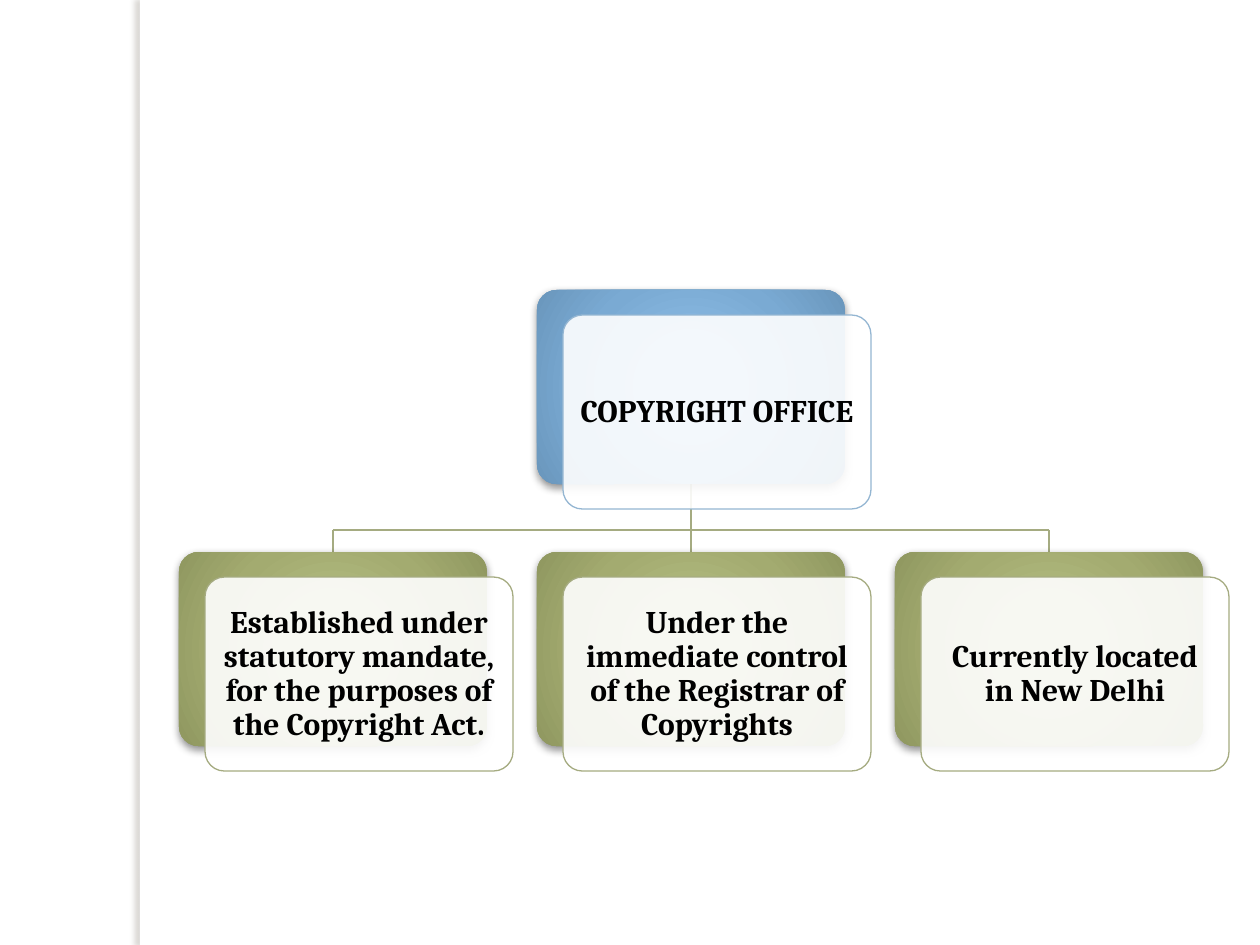
"""Builds a slide with the copyright office and its three features as a hierarchy."""
from lxml.etree import SubElement
from pptx import Presentation
from pptx.dml.color import RGBColor
from pptx.enum.shapes import MSO_CONNECTOR, MSO_SHAPE
from pptx.enum.text import MSO_ANCHOR, PP_ALIGN
from pptx.oxml import parse_xml
from pptx.oxml.ns import nsdecls, qn
from pptx.util import Pt

PX = 914400 / 126
W, H, DX, DY = 308, 194, 26, 25
LEFT, STEP, ROOT_Y, CHILD_Y, BAR_Y = 179, 358, 290, 552, 530
BLUE, GREEN = "94B6D2", "A5AB81"
STOPS = [0, 15, 62, 97, 100]
GRADIENTS = {
    BLUE: ["8DBFE9", "8DBEE8", "7AAAD3", "6B98BE", "6796BC"],
    GREEN: ["B7C085", "B6BF84", "A3AB70", "919961", "8F975D"],
}
CARDS = [
    (1, ROOT_Y, BLUE, "COPYRIGHT OFFICE"),
    (0, CHILD_Y, GREEN, "Established under statutory mandate, for the purposes of the Copyright Act."),
    (1, CHILD_Y, GREEN, "Under the immediate control of the Registrar of Copyrights"),
    (2, CHILD_Y, GREEN, "Currently located in New Delhi"),
]


def rgb(color):
    return RGBColor.from_string(color)


def add_box(kind, x, y, w, h, shadow=None):
    s = slide.shapes.add_shape(kind, *[round(v * PX) for v in (x, y, w, h)])
    s.fill.solid()
    s.fill.fore_color.rgb = rgb("FFFFFF")
    s.line.fill.background()
    s.shadow.inherit = False
    if shadow:
        color, alpha, blur, dist, angle = shadow
        s._element.spPr.find(qn("a:effectLst")).append(parse_xml(
            f'<a:outerShdw {nsdecls("a")} blurRad="{Pt(blur)}" dist="{Pt(dist)}" '
            f'dir="{angle * 60000}" rotWithShape="0"><a:srgbClr val="{color}">'
            f'<a:alpha val="{alpha * 1000}"/></a:srgbClr></a:outerShdw>'))
    return s


prs = Presentation()
prs.slide_width, prs.slide_height = round(1260 * PX), round(945 * PX)
slide = prs.slides.add_slide(prs.slide_layouts[6])
add_box(MSO_SHAPE.RECTANGLE, 140, 0, 10, 945, ("766E60", 25, 3, 3, 180))

centers = [LEFT + W // 2 + i * STEP for i in range(3)]
lines = []
for x1, y1, x2, y2 in [
    (centers[0], BAR_Y, centers[2], BAR_Y),
    (centers[0], BAR_Y, centers[0], CHILD_Y),
    (centers[1], ROOT_Y + H, centers[1], CHILD_Y),
    (centers[2], BAR_Y, centers[2], CHILD_Y),
]:
    c = slide.shapes.add_connector(
        MSO_CONNECTOR.STRAIGHT, *[round(v * PX) for v in (x1, y1, x2, y2)])
    c.line.color.rgb = rgb(GREEN)
    c.line.width = Pt(0.75)
    SubElement(c._element.spPr, qn("a:effectLst"))
    lines.append(c)

backs = []
for col, y, color, text in CARDS:
    x = LEFT + col * STEP
    back = add_box(MSO_SHAPE.ROUNDED_RECTANGLE, x, y, W, H, ("000000", 43, 5, 2, 90))
    back.adjustments[0] = 0.1
    stops = "".join(f'<a:gs pos="{pos * 1000}"><a:srgbClr val="{shade}"/></a:gs>'
                    for pos, shade in zip(STOPS, GRADIENTS[color]))
    solid = back._element.spPr.find(qn("a:solidFill"))
    back._element.spPr.replace(solid, parse_xml(
        f'<a:gradFill {nsdecls("a")} rotWithShape="1"><a:gsLst>{stops}</a:gsLst>'
        '<a:path path="circle"><a:fillToRect l="50000" t="50000" r="50000" b="50000"/>'
        '</a:path></a:gradFill>'))
    backs.append(back)

    front = add_box(MSO_SHAPE.ROUNDED_RECTANGLE, x + DX, y + DY, W, H)
    front.adjustments[0] = 0.1
    white = front._element.spPr.find(qn("a:solidFill")).find(qn("a:srgbClr"))
    SubElement(white, qn("a:alpha"), val="90000")
    front.line.color.rgb = rgb(color)
    front.line.width = Pt(0.75)
    tf = front.text_frame
    tf.word_wrap = True
    tf.vertical_anchor = MSO_ANCHOR.MIDDLE
    tf.margin_left = tf.margin_right = tf.margin_top = tf.margin_bottom = round(9 * PX)
    tf.text = text
    p = tf.paragraphs[0]
    p.alignment = PP_ALIGN.CENTER
    p.line_spacing = 0.9
    r = p.runs[0]
    r.font.name = "Cambria"
    r.font.size = Pt(18)
    r.font.bold = True
    r.font.color.rgb = rgb("000000")

lines[2].begin_connect(backs[0], 2)
for line, back in zip(lines[1:], backs[1:]):
    line.end_connect(back, 0)

prs.save("out.pptx")
